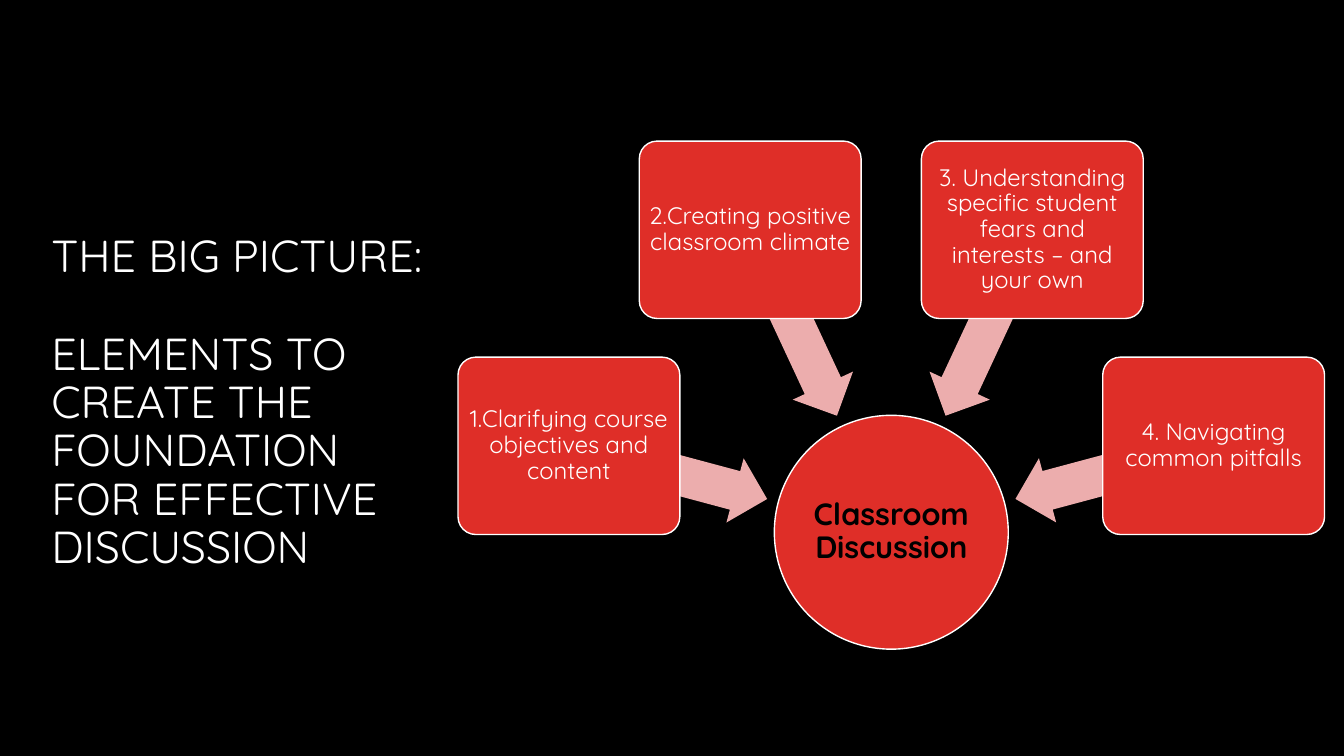
from math import cos, radians, sin

from pptx import Presentation
from pptx.dml.color import RGBColor
from pptx.enum.shapes import MSO_SHAPE as SHAPE
from pptx.enum.text import MSO_ANCHOR as ANCHOR, MSO_AUTO_SIZE as AUTO, PP_ALIGN as ALIGN
from pptx.util import Inches, Pt

BLACK = RGBColor(0x00, 0x00, 0x00)
WHITE = RGBColor(0xFF, 0xFF, 0xFF)
RED = RGBColor(0xDF, 0x2E, 0x28)
PINK = RGBColor(0xEC, 0xAD, 0xAD)

HUB_X, HUB_Y, HUB_SIZE = 8.84, 5.28, 2.32
ARROW_RADIUS, BOX_RADIUS = 2.29, 3.31
TITLE_FORMAT = {"name": "Quicksand", "size": Pt(32), "bold": False}
HUB_FORMAT = {"name": "Quicksand", "size": Pt(22), "bold": True}
BOX_FORMAT = {"name": "Quicksand", "size": Pt(17), "bold": False}
ELEMENTS = [
    "1.Clarifying course objectives and content",
    "2.Creating positive classroom climate",
    "3. Understanding specific student fears and interests – and your own",
    "4. Navigating common pitfalls",
]


def add_centred(kind, x, y, w, h, fill):
    s = shapes.add_shape(kind, Inches(x - w / 2), Inches(y - h / 2), Inches(w), Inches(h))
    s.shadow.inherit = False
    s.fill.solid()
    s.fill.fore_color.rgb = fill
    s.line.fill.background()
    return s


def add_label(s, text, inset, color, font_format):
    s.line.color.rgb = WHITE
    s.line.width = Pt(1)
    tf = s.text_frame
    tf.word_wrap = True
    tf.vertical_anchor = ANCHOR.MIDDLE
    for side in ("left", "top", "right", "bottom"):
        setattr(tf, f"margin_{side}", Inches(inset))
    p = tf.paragraphs[0]
    p.text = text
    p.alignment = ALIGN.CENTER
    p.line_spacing = 0.9
    p.font.color.rgb = color
    for name, value in font_format.items():
        setattr(p.font, name, value)


prs = Presentation()
prs.slide_width, prs.slide_height = Inches(13.33), Inches(7.5)
slide = prs.slides.add_slide(prs.slide_layouts[5])
slide.background.fill.solid()
slide.background.fill.fore_color.rgb = BLACK
shapes = slide.shapes

title = shapes.title
title.left, title.top = Inches(0.41), Inches(1.93)
title.width, title.height = Inches(3.93), Inches(3.81)
tf = title.text_frame
tf.text = "THE BIG PICTURE:\nELEMENTS TO CREATE THE FOUNDATION FOR EFFECTIVE DISCUSSION"
tf.word_wrap = True
tf.auto_size = AUTO.NONE
tf.vertical_anchor = ANCHOR.BOTTOM
for p in tf.paragraphs:
    p.alignment = ALIGN.LEFT
    p.line_spacing = 0.9
    p.font.color.rgb = WHITE
    for name, value in TITLE_FORMAT.items():
        setattr(p.font, name, value)
tf.paragraphs[1].space_before = Pt(35)

hub = add_centred(SHAPE.OVAL, HUB_X, HUB_Y, HUB_SIZE, HUB_SIZE, RED)
add_label(hub, "Classroom Discussion", 0.02, BLACK, HUB_FORMAT)

for i, text in enumerate(ELEMENTS):
    angle = 195 + 50 * i
    dx, dy = cos(radians(angle)), sin(radians(angle))

    arrow = add_centred(SHAPE.LEFT_ARROW, HUB_X + ARROW_RADIUS * dx,
                        HUB_Y + ARROW_RADIUS * dy, 2.03, 0.66, PINK)
    arrow.rotation = angle
    arrow.adjustments[0] = 0.6
    arrow.adjustments[1] = 0.5

    box = add_centred(SHAPE.ROUNDED_RECTANGLE, HUB_X + BOX_RADIUS * dx,
                      HUB_Y + BOX_RADIUS * dy, 2.2, 1.76, RED)
    box.adjustments[0] = 0.1
    add_label(box, text, 0.04, WHITE, BOX_FORMAT)

prs.save("out.pptx")
